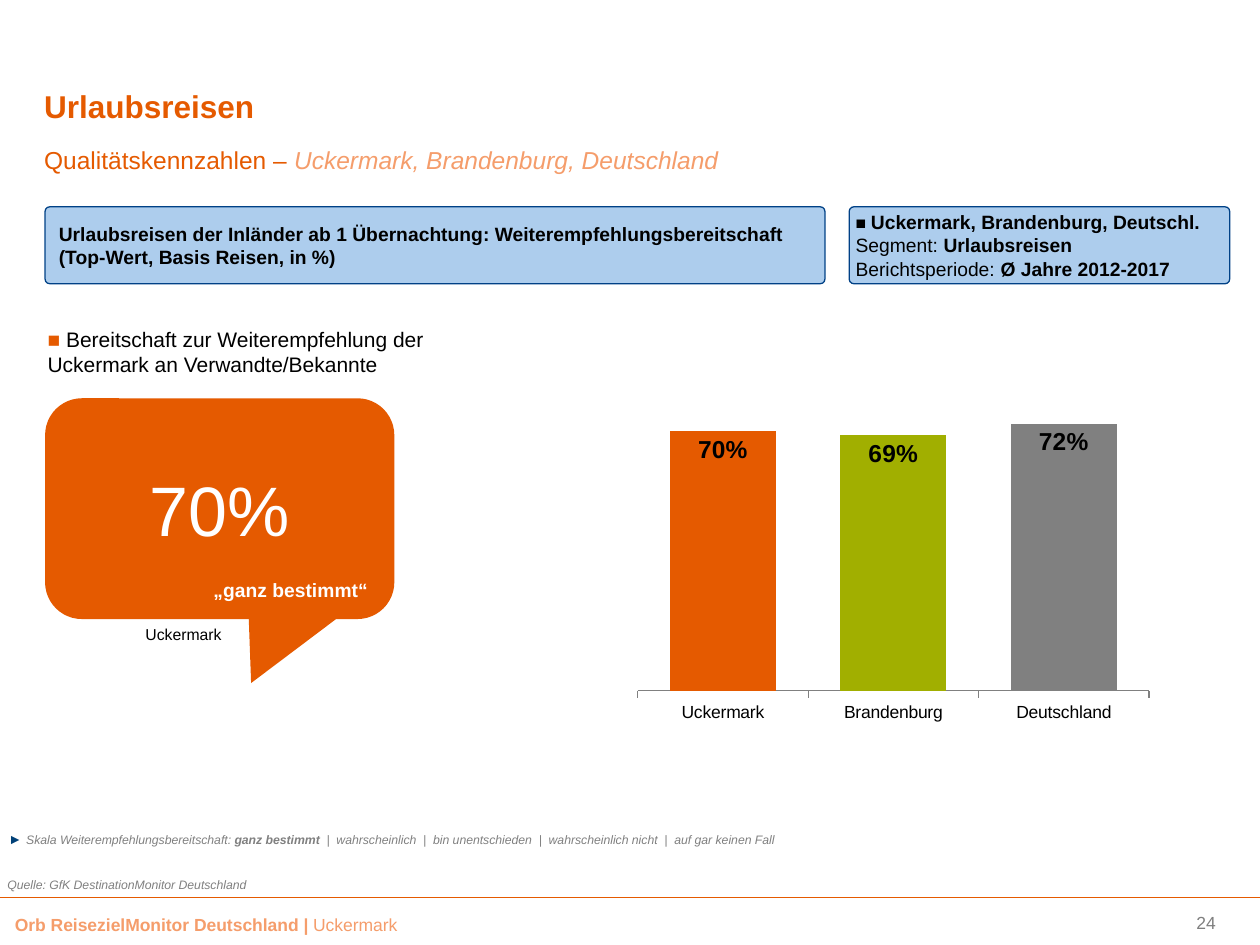
from lxml import etree
from pptx import Presentation
from pptx.chart.data import CategoryChartData
from pptx.dml.color import RGBColor
from pptx.enum import chart as ch, shapes, text
from pptx.oxml import parse_xml
from pptx.oxml.ns import nsdecls, qn
from pptx.util import Cm, Pt

ORANGE, PALE, GREY = "E55A00", "F59D6B", "808080"
BLACK, WHITE, NAVY = "000000", "FFFFFF", "004178"
LEFT, RIGHT, CENTER = text.PP_ALIGN.LEFT, text.PP_ALIGN.RIGHT, text.PP_ALIGN.CENTER
INSET = (0.25, 0.13, 0.25, 0.13)

# A run is (text, size, colour, style), where style holds b for bold, i for italic.
TITLE = [("Urlaubsreisen", 18, ORANGE, "b")]
SUBTITLE = [
    ("Qualitätskennzahlen – ", 14, ORANGE, ""),
    ("Uckermark, Brandenburg, Deutschland", 14, PALE, "i"),
]
# Banner: left, width, insets, runs
BANNERS = [
    (0.91, 15.72, INSET, [
        ("Urlaubsreisen der Inländer ab 1 Übernachtung: Weiterempfehlungsbereitschaft\n"
         "(Top-Wert, Basis Reisen, in %)", 11, BLACK, "b"),
    ]),
    (17.12, 7.67, (0.1, 0.13, 0, 0.13), [
        ("■ ", 10, BLACK, "b"),
        ("Uckermark, Brandenburg, Deutschl.\n", 11, BLACK, "b"),
        ("Segment: ", 11, BLACK, ""),
        ("Urlaubsreisen\n", 11, BLACK, "b"),
        ("Berichtsperiode: ", 11, BLACK, ""),
        ("Ø Jahre 2012-2017", 11, BLACK, "b"),
    ]),
]
BUBBLE = [("70%", 40, WHITE, "")]
# Text box: place, alignment, runs
TEXTS = [
    ((0.91, 11.53, 6.76, 0.74), RIGHT, [("„ganz bestimmt“", 11, WHITE, "b")]),
    ((2.41, 12.47, 2.58, 0.64), CENTER, [("Uckermark", 9, BLACK, "")]),
    ((0.71, 6.45, 11.56, 1.27), LEFT, [
        ("■ ", 12, ORANGE, ""),
        ("Bereitschaft zur Weiterempfehlung der\n"
         "Uckermark an Verwandte/Bekannte", 12, BLACK, ""),
    ]),
    ((-0.08, 16.61, 25.48, 0.61), LEFT, [
        ("► ", 8, NAVY, ""),
        ("Skala Weiterempfehlungsbereitschaft: ", 7, GREY, "i"),
        ("ganz bestimmt", 7, GREY, "bi"),
        ("  |  wahrscheinlich  |  bin unentschieden  |  wahrscheinlich nicht"
         "  |  auf gar keinen Fall", 7, GREY, "i"),
    ]),
    ((-0.1, 17.55, 7.29, 0.58), LEFT,
     [("Quelle: GfK DestinationMonitor Deutschland", 7, GREY, "i")]),
    ((0.05, 18.29, 17.1, 0.69), LEFT, [
        ("Orb ReisezielMonitor Deutschland | ", 10, PALE, "b"),
        ("Uckermark", 10, PALE, ""),
    ]),
    ((20.65, 18.26, 4.11, 0.67), RIGHT, [("24", 10, "7F7F7F", "")]),
]
BARS = [
    ("Uckermark", 0.70, ORANGE),
    ("Brandenburg", 0.69, "A1AF00"),
    ("Deutschland", 0.72, GREY),
]
PLOT = {"x": 0.05, "y": 0, "w": 0.91, "h": 0.87}


def rgb(code):
    return RGBColor.from_string(code)


def style(font, size, color, look=""):
    font.name, font.size = "Arial", Pt(size)
    font.color.rgb = rgb(color)
    font.bold, font.italic = "b" in look, "i" in look


def write(shape, runs, align=LEFT, anchor=text.MSO_ANCHOR.TOP, inset=INSET):
    frame = shape.text_frame
    frame.word_wrap, frame.vertical_anchor = True, anchor
    frame.auto_size = text.MSO_AUTO_SIZE.NONE
    (frame.margin_left, frame.margin_top,
     frame.margin_right, frame.margin_bottom) = map(Cm, inset)
    para = frame.paragraphs[0]
    para.alignment, para.space_before = align, Pt(0)
    if len(runs) == 1:
        style(para.font, *runs[0][1:])
    for words, *look in runs:
        for i, line in enumerate(words.split("\n")):
            if i:
                para.add_line_break()
            if line:
                run = para.add_run()
                run.text = line
                if len(runs) > 1:
                    style(run.font, *look)


def add_box(slide, kind, place, fill, line=None):
    box = slide.shapes.add_shape(kind, *map(Cm, place))
    box.shadow.inherit = False
    box.fill.solid()
    box.fill.fore_color.rgb = rgb(fill)
    if line:
        box.line.color.rgb, box.line.width = rgb(line), Pt(0.75)
    else:
        box.line.fill.background()
    return box


def add_bars(slide, place):
    data = CategoryChartData(number_format="0%")
    data.categories = [name for name, _, _ in BARS]
    data.add_series("Weiterempfehlung", [value for _, value, _ in BARS])
    chart = slide.shapes.add_chart(
        ch.XL_CHART_TYPE.COLUMN_CLUSTERED, *map(Cm, place), data).chart
    chart.has_legend = chart.has_title = False
    style(chart.font, 18, BLACK)

    plot = chart.plots[0]
    plot.gap_width, plot.overlap, plot.vary_by_categories = 61, 52, False
    for i, (_, _, color) in enumerate(BARS):
        fill = plot.series[0].points[i].format.fill
        fill.solid()
        fill.fore_color.rgb = rgb(color)
    plot.has_data_labels = True
    labels = plot.data_labels
    labels.show_value, labels.position = True, ch.XL_LABEL_POSITION.INSIDE_END
    labels.number_format, labels.number_format_is_linked = "0%", False
    style(labels.font, 14, BLACK, "b")

    axis = chart.value_axis
    axis.minimum_scale, axis.maximum_scale = 0, 1
    axis.has_major_gridlines = axis.visible = False
    axis = chart.category_axis
    axis.major_tick_mark = ch.XL_TICK_MARK.OUTSIDE
    axis.format.line.color.rgb = rgb(GREY)
    style(axis.tick_labels.font, 10, BLACK)

    area = chart._chartSpace.chart.plotArea
    for old in area.findall(qn("c:layout")):
        area.remove(old)
    parts = '<c:layoutTarget val="inner"/><c:xMode val="edge"/><c:yMode val="edge"/>'
    parts += "".join(f'<c:{key} val="{val}"/>' for key, val in PLOT.items())
    area.insert(0, parse_xml(
        f'<c:layout {nsdecls("c")}><c:manualLayout>{parts}</c:manualLayout></c:layout>'))


def main():
    deck = Presentation()
    deck.slide_width, deck.slide_height = Cm(25.4), Cm(19.05)
    slide = deck.slides.add_slide(deck.slide_layouts[5])

    title = slide.shapes.title
    title.left, title.top, title.width, title.height = map(Cm, (0.89, 0.71, 17.6, 1.8))
    write(title, TITLE, anchor=text.MSO_ANCHOR.BOTTOM, inset=(0, 0, 0, 0))
    head = slide.shapes.add_textbox(*map(Cm, (0.89, 2.92, 23.6, 0.79)))
    write(head, SUBTITLE, inset=(0, 0, 0, 0))

    rule = slide.shapes.add_connector(
        shapes.MSO_CONNECTOR.STRAIGHT, 0, Cm(18.1), deck.slide_width, Cm(18.1))
    rule.line.color.rgb, rule.line.width = rgb(ORANGE), Pt(0.55)
    etree.SubElement(rule._element.spPr, qn("a:effectLst"))

    for left, width, inset, runs in BANNERS:
        box = add_box(slide, shapes.MSO_SHAPE.ROUNDED_RECTANGLE,
                      (left, 4.17, width, 1.55), "ADCDED", "004186")
        box.adjustments[0] = 0.06
        write(box, runs, anchor=text.MSO_ANCHOR.MIDDLE, inset=inset)

    bubble = add_box(slide, shapes.MSO_SHAPE.ROUNDED_RECTANGULAR_CALLOUT,
                     (0.91, 8.03, 7.04, 4.45), ORANGE)
    bubble.adjustments[0], bubble.adjustments[1] = 0.09, 0.79
    write(bubble, BUBBLE, CENTER, text.MSO_ANCHOR.MIDDLE)

    add_bars(slide, (12.29, 6.45, 11.33, 8.59))
    for place, align, runs in TEXTS:
        write(slide.shapes.add_textbox(*map(Cm, place)), runs, align)

    deck.save("out.pptx")


if __name__ == "__main__":
    main()
